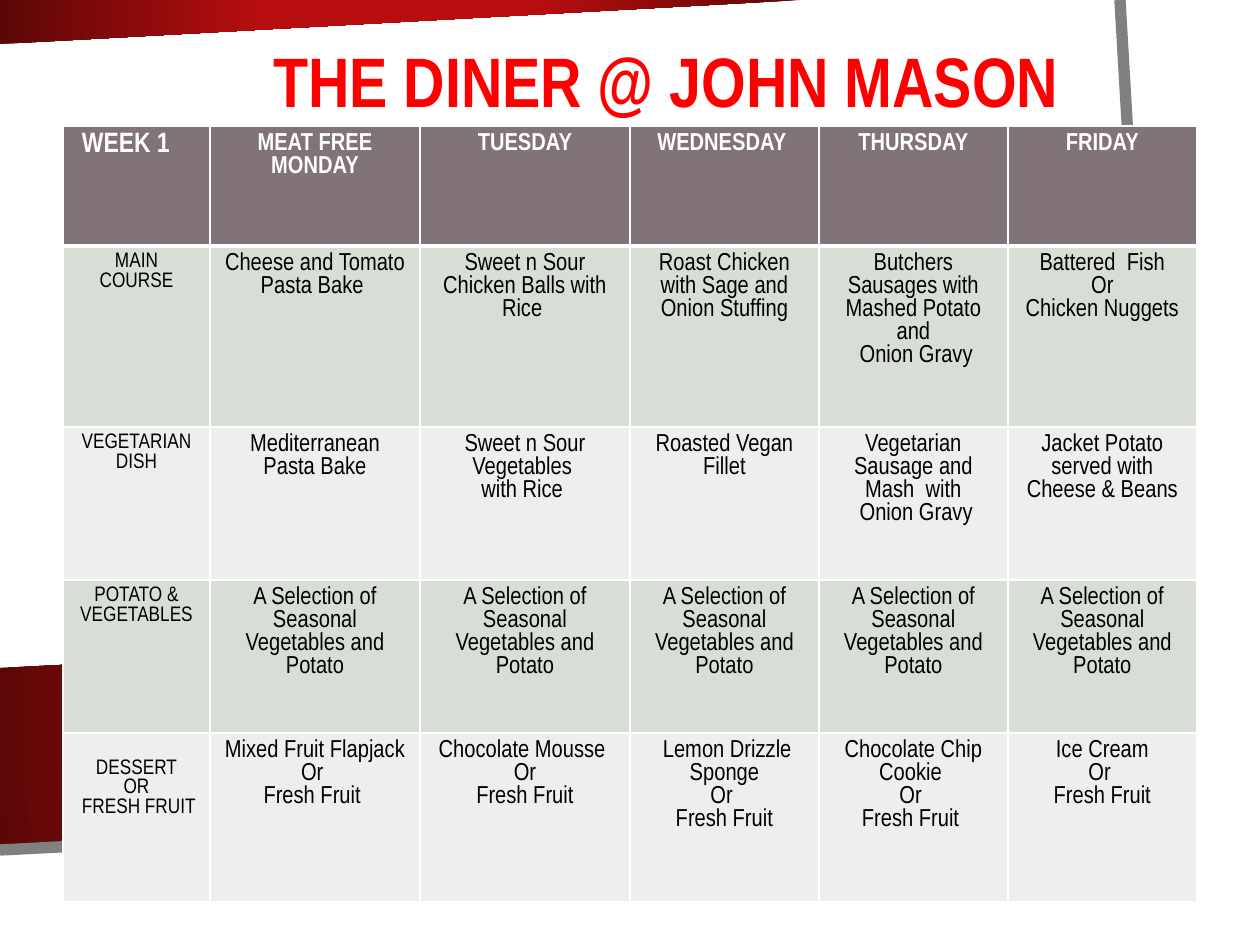
import pptx
import pptx.dml.color
import pptx.enum.text
import pptx.oxml
import pptx.oxml.ns
import pptx.util

RGBColor = pptx.dml.color.RGBColor
ALIGN = pptx.enum.text.PP_ALIGN
WHITE = RGBColor(0xFF, 0xFF, 0xFF)
BLACK = RGBColor(0, 0, 0)
TITLE_RED = RGBColor(0xFF, 0, 0)
BRIGHT_RED = RGBColor(0xB8, 0x0E, 0x0F)
DARK_RED = RGBColor(0x5C, 0x07, 0x07)
GREY = RGBColor(0x80, 0x80, 0x80)
HEADER = RGBColor(0x80, 0x73, 0x7A)
BANDS = [RGBColor(0xD8, 0xDE, 0xD5), RGBColor(0xEC, 0xEF, 0xEB)]

PX = 914400 // 126
FONT = "Arial Narrow"
TITLE = "THE DINER @ JOHN MASON"
SELECTION = "A Selection of Seasonal Vegetables and Potato"
MENU = [
    [" WEEK 1", "MEAT FREE MONDAY", "TUESDAY", "WEDNESDAY ", "THURSDAY", "FRIDAY"],
    ["MAIN\nCOURSE", "Cheese and Tomato Pasta Bake ",
     "Sweet n Sour Chicken Balls with Rice ",
     "Roast Chicken with Sage and Onion Stuffing",
     "Butchers Sausages with Mashed Potato and\n Onion Gravy",
     "Battered  Fish\nOr\nChicken Nuggets"],
    ["VEGETARIAN DISH", "Mediterranean Pasta Bake",
     "Sweet n Sour Vegetables \nwith Rice ", "Roasted Vegan Fillet",
     "Vegetarian Sausage and Mash  with\n Onion Gravy",
     "Jacket Potato served with Cheese & Beans"],
    ["POTATO & VEGETABLES"] + [SELECTION] * 5,
    ["DESSERT\nOR\n FRESH FRUIT", "Mixed Fruit Flapjack\nOr \nFresh Fruit ",
     "Chocolate Mousse \nOr\nFresh Fruit", " Lemon Drizzle Sponge\nOr \nFresh Fruit",
     "Chocolate Chip Cookie \nOr \nFresh Fruit ", "Ice Cream\nOr \nFresh Fruit"],
]
COLUMN_WIDTHS = [147, 210, 210, 189, 189, 189]
ROW_HEIGHTS = [120, 181, 153, 153, 169]
TABLE_LEFT, TABLE_TOP = 63, 126
DESSERT_TOP_MARGIN = 26

RED_BANDS = [
    [(0, 668), (1153, 612), (1166, 791), (0, 849)],
    [(0, 0), (800, 0), (0, 44)],
]
FRAME_LINE = [(1120, 0), (1166, 790), (0, 850)]


def add_outline(slide, points, close):
    builder = slide.shapes.build_freeform(*points[0], scale=PX)
    builder.add_line_segments(points[1:], close=close)
    shape = builder.convert_to_shape()
    shape.shadow.inherit = False
    return shape


def add_red_band(slide, points):
    shape = add_outline(slide, points, True)
    shape.line.fill.background()
    shape.fill.gradient()
    for stop, position, color in zip(
            shape.fill.gradient_stops, (0.34, 1), (BRIGHT_RED, DARK_RED)):
        stop.position = position
        stop.color.rgb = color
    linear = shape.element.spPr.find(".//" + pptx.oxml.ns.qn("a:lin"))
    linear.getparent().replace(linear, pptx.oxml.parse_xml(
        f'<a:path {pptx.oxml.ns.nsdecls("a")} path="circle">'
        '<a:fillToRect l="50000" t="50000" r="50000" b="50000"/></a:path>'))


def add_frame_line(slide):
    shape = add_outline(slide, FRAME_LINE, False)
    shape.fill.background()
    shape.line.color.rgb = GREY
    shape.line.width = pptx.util.Pt(6.5)


def style_font(font, size, color, bold):
    font.name = FONT
    font.size = pptx.util.Pt(size)
    font.color.rgb = color
    font.bold = bold


def add_title(slide):
    box = slide.shapes.add_textbox(-32 * PX, 44 * PX, 1396 * PX, 85 * PX)
    frame = box.text_frame
    frame.word_wrap = True
    frame.vertical_anchor = pptx.enum.text.MSO_ANCHOR.BOTTOM
    paragraph = frame.paragraphs[0]
    paragraph.text = TITLE
    paragraph.alignment = ALIGN.CENTER
    paragraph.line_spacing = 0.9
    style_font(paragraph.font, 40, TITLE_RED, True)


def set_borders(cell, row):
    properties = cell._tc.get_or_add_tcPr()
    widths = {"L": 1, "R": 1, "T": 3 if row == 1 else 1, "B": 3 if row == 0 else 1}
    for side, width in widths.items():
        properties.append(pptx.oxml.parse_xml(
            f'<a:ln{side} {pptx.oxml.ns.nsdecls("a")} w="{width * 12700}">'
            f'<a:solidFill><a:srgbClr val="{WHITE}"/></a:solidFill></a:ln{side}>'))


def fill_cell(cell, text, row, column):
    set_borders(cell, row)
    cell.fill.solid()
    cell.fill.fore_color.rgb = HEADER if row == 0 else BANDS[(row - 1) % 2]
    cell.text = text
    if column == 0:
        size = 16 if row == 0 else 12
    else:
        size = 14
    for paragraph in cell.text_frame.paragraphs:
        paragraph.alignment = ALIGN.LEFT if row == column == 0 else ALIGN.CENTER
        style_font(paragraph.font, size, BLACK if row else WHITE, row == 0)


def add_menu(slide):
    table = slide.shapes.add_table(
        len(ROW_HEIGHTS), len(COLUMN_WIDTHS), TABLE_LEFT * PX, TABLE_TOP * PX,
        sum(COLUMN_WIDTHS) * PX, sum(ROW_HEIGHTS) * PX).table
    for column, width in zip(table.columns, COLUMN_WIDTHS):
        column.width = width * PX
    for row, height in zip(table.rows, ROW_HEIGHTS):
        row.height = height * PX
    for row, texts in enumerate(MENU):
        for column, text in enumerate(texts):
            fill_cell(table.cell(row, column), text, row, column)
    table.cell(len(MENU) - 1, 0).margin_top = DESSERT_TOP_MARGIN * PX


def main():
    presentation = pptx.Presentation()
    presentation.slide_width = pptx.util.Inches(10)
    presentation.slide_height = pptx.util.Inches(7.5)
    slide = presentation.slides.add_slide(presentation.slide_layouts[6])
    for points in RED_BANDS:
        add_red_band(slide, points)
    add_frame_line(slide)
    add_title(slide)
    add_menu(slide)
    presentation.save("out.pptx")


if __name__ == "__main__":
    main()
